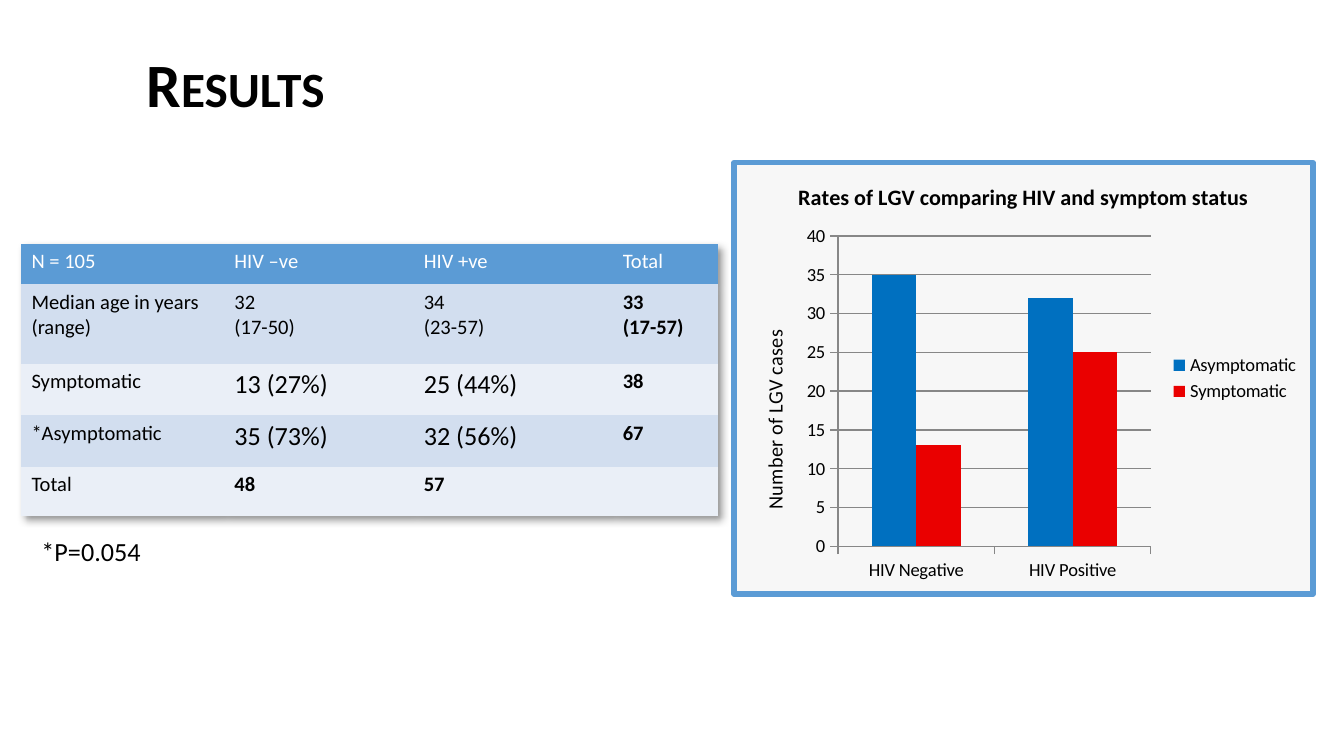
from dataclasses import dataclass

from lxml import etree
from pptx import Presentation
from pptx.chart.data import CategoryChartData
from pptx.dml.color import RGBColor as RGB
from pptx.enum.chart import XL_CHART_TYPE as CT, XL_LEGEND_POSITION as LP, XL_TICK_MARK as TM
from pptx.enum.text import MSO_ANCHOR as ANCHOR
from pptx.oxml import parse_xml
from pptx.oxml.ns import nsdecls, qn
from pptx.util import Pt


@dataclass(frozen=True)
class Theme:
    font: str = "Calibri"
    ink: str = "000000"
    white: str = "FFFFFF"
    accent: str = "5B9BD5"
    bands: tuple = ("D2DEEF", "EAEFF7")
    panel: str = "F7F7F7"
    grid: str = "878787"
    series: tuple = ("0070C0", "EA0000")
    title: int = 33
    large: int = 14
    chart_title: int = 12
    body: int = 11
    chart: int = 10


T = Theme()
NO_STYLE = "{2D5ABB26-0587-4C30-8999-92F81FD0307C}"
INSETS = dict(margin_left=Pt(5.4), margin_top=Pt(2.7), margin_right=Pt(5.4), margin_bottom=Pt(2.7))

ROWS = [
    ["N = 105", "HIV –ve", "HIV +ve", "Total"],
    ["Median age in years (range)", "32\n(17-50)", "34\n(23-57)", "33\n(17-57)"],
    ["Symptomatic", "13 (27%)", "25 (44%)", "38"],
    ["*Asymptomatic", "35 (73%)", "32 (56%)", "67"],
    ["Total", "48", "57", ""],
]
COL_WIDTHS = [108.7, 101.5, 106.6, 56.6]
ROW_HEIGHTS = [21.8, 42.5, 27.7, 27.7, 26.4]
CASES = {"Asymptomatic": (35, 32), "Symptomatic": (13, 25)}


def set_attrs(obj, values):
    for name, value in values.items():
        setattr(obj, name, value)


def set_font(font, size, color=T.ink, bold=False):
    set_attrs(font, dict(name=T.font, size=Pt(size), bold=bold))
    font.color.rgb = RGB.from_string(color)


def set_layout(parent, index, **fractions):
    """Give a chart part a manual layout, in fractions of the chart."""
    for old in parent.findall(qn("c:layout")):
        parent.remove(old)
    layout = etree.Element(qn("c:layout"))
    manual = etree.SubElement(layout, qn("c:manualLayout"))
    if "w" in fractions:
        etree.SubElement(manual, qn("c:layoutTarget"), val="inner")
    for key in ("xMode", "yMode"):
        etree.SubElement(manual, qn(f"c:{key}"), val="edge")
    for key, value in fractions.items():
        etree.SubElement(manual, qn(f"c:{key}"), val=str(value))
    parent.insert(index, layout)


def add_title(slide, box, text):
    sp = slide.shapes.title
    set_attrs(sp, dict(zip(("left", "top", "width", "height"), map(Pt, box))))
    tf = sp.text_frame
    set_attrs(tf, dict(INSETS, vertical_anchor=ANCHOR.MIDDLE, word_wrap=True))
    p = tf.paragraphs[0]
    set_attrs(p, dict(line_spacing=0.9, alignment=1))
    r = p.add_run()
    r.text = text
    set_font(r.font, T.title, bold=True)
    r.font._element.set("cap", "small")


def cell_format(row, col):
    if row == 0:
        return dict(size=T.body, color=T.white)
    large = row in (2, 3) and col in (1, 2)
    total = col == 3 or (row == 4 and col > 0)
    return dict(size=T.large if large else T.body, bold=total)


def add_results_table(slide, box):
    frame = slide.shapes.add_table(len(ROWS), len(COL_WIDTHS), *map(Pt, box))
    table = frame.table
    props = table._tbl.tblPr
    props.find(qn("a:tableStyleId")).text = NO_STYLE
    props.insert(0, parse_xml(
        f'<a:effectLst {nsdecls("a")}><a:outerShdw blurRad="50800" dist="38100" dir="2700000" '
        'algn="tl" rotWithShape="0"><a:prstClr val="black"><a:alpha val="40000"/></a:prstClr>'
        '</a:outerShdw></a:effectLst>'))
    for column, width in zip(table.columns, COL_WIDTHS):
        column.width = Pt(width)
    for i, (row, height) in enumerate(zip(ROWS, ROW_HEIGHTS)):
        table.rows[i].height = Pt(height)
        for j, text in enumerate(row):
            cell = table.cell(i, j)
            set_attrs(cell, dict(INSETS, text=text))
            cell.fill.solid()
            cell.fill.fore_color.rgb = RGB.from_string(T.bands[(i - 1) % 2] if i else T.accent)
            for p in cell.text_frame.paragraphs:
                set_font(p.font, **cell_format(i, j))
                for r in p.runs:
                    set_font(r.font, **cell_format(i, j))


def add_chart_title(holder, text, size, bold):
    tf = holder.text_frame
    tf.text = text
    set_font(tf.paragraphs[0].runs[0].font, size, bold=bold)
    return tf


def add_cases_chart(slide, box):
    data = CategoryChartData()
    data.categories = ["HIV Negative", "HIV Positive"]
    for name, values in CASES.items():
        data.add_series(name, values)
    chart = slide.shapes.add_chart(CT.COLUMN_CLUSTERED, *map(Pt, box), data).chart
    set_font(chart.font, T.chart)
    chart._chartSpace.find(qn("c:txPr")).addprevious(parse_xml(
        f'<c:spPr {nsdecls("c", "a")}><a:solidFill><a:srgbClr val="{T.panel}"/></a:solidFill>'
        f'<a:ln w="{Pt(3)}"><a:solidFill><a:srgbClr val="{T.accent}"/></a:solidFill><a:round/></a:ln>'
        '</c:spPr>'))

    chart.has_title = True
    add_chart_title(chart.chart_title, "Rates of LGV comparing HIV and symptom status",
                    T.chart_title, True)
    chart.has_legend = True
    set_attrs(chart.legend, dict(position=LP.RIGHT, include_in_layout=False))

    plot = chart.plots[0]
    set_attrs(plot, dict(gap_width=150, overlap=0, vary_by_categories=False))
    for series, color in zip(plot.series, T.series):
        series.format.fill.solid()
        series.format.fill.fore_color.rgb = RGB.from_string(color)

    cat, val = chart.category_axis, chart.value_axis
    set_attrs(val, dict(minimum_scale=0, maximum_scale=40, major_unit=5, has_major_gridlines=True))
    for axis in (cat, val):
        set_attrs(axis, dict(major_tick_mark=TM.OUTSIDE, minor_tick_mark=TM.NONE))
    for part in (cat, val, val.major_gridlines):
        part.format.line.color.rgb = RGB.from_string(T.grid)
        part.format.line.width = Pt(0.75)
    tf = add_chart_title(val.axis_title, "Number of LGV cases", T.body, False)
    tf._txBody.find(qn("a:bodyPr")).set("rot", "-5400000")
    set_layout(val.axis_title._element, 1, x=0.04, y=0.38)
    set_layout(chart._chartSpace.chart.plotArea, 0, x=0.18, y=0.17, w=0.54, h=0.72)


def add_footnote(slide, box, text):
    tf = slide.shapes.add_textbox(*map(Pt, box)).text_frame
    set_attrs(tf, dict(INSETS, word_wrap=False))
    r = tf.paragraphs[0].add_run()
    r.text = text
    set_font(r.font, T.large)


def main():
    prs = Presentation()
    set_attrs(prs, dict(slide_width=Pt(720), slide_height=Pt(405)))
    slide = prs.slides.add_slide(prs.slide_layouts[5])
    add_title(slide, (73, 18, 620.6, 57.6), "Results")
    add_cases_chart(slide, (391.7, 85.7, 313.2, 234))
    add_results_table(slide, (11.5, 130.5, sum(COL_WIDTHS), sum(ROW_HEIGHTS)))
    add_footnote(slide, (16.8, 283.9, 64.8, 22.3), "*P=0.054")
    prs.save("out.pptx")


if __name__ == "__main__":
    main()
